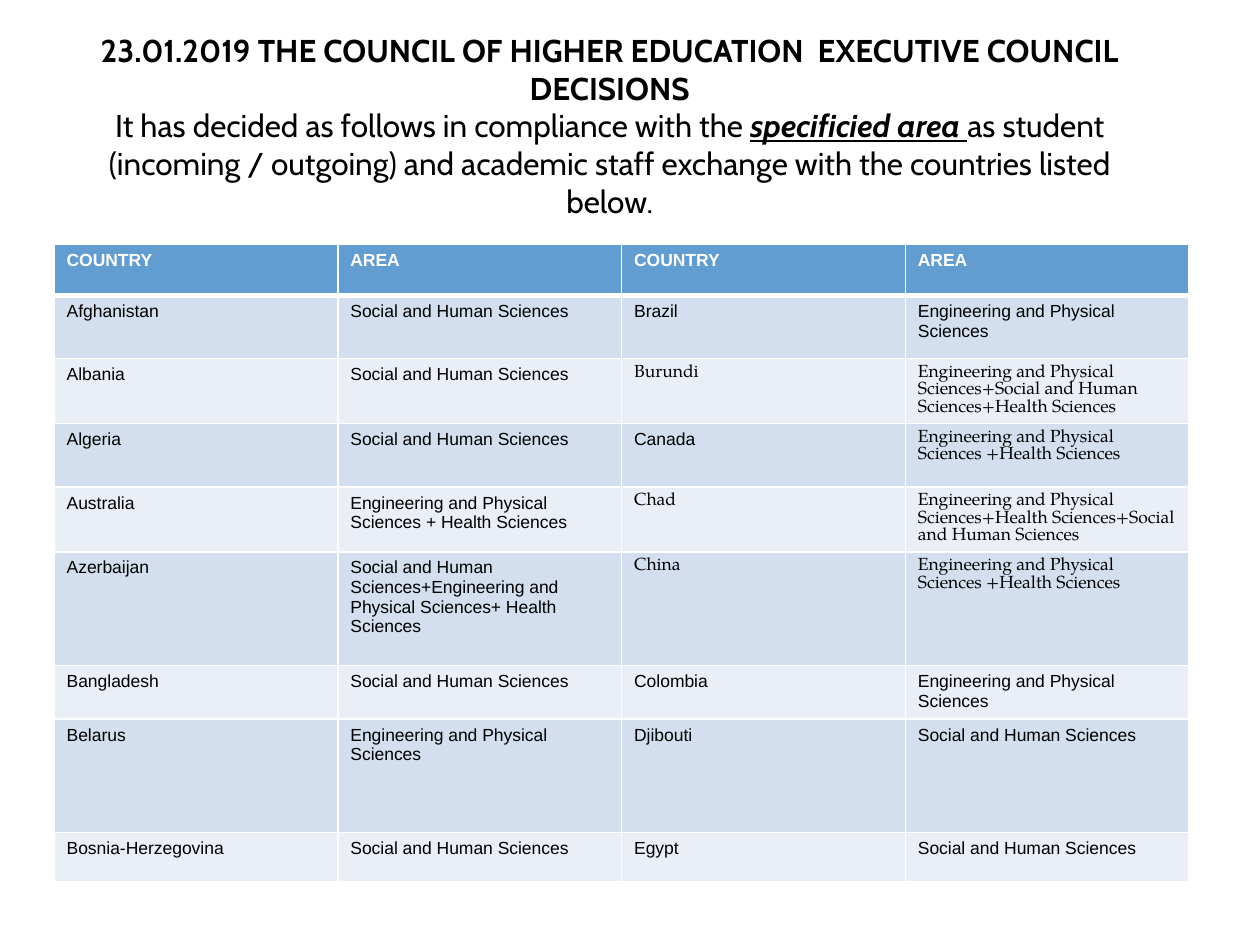
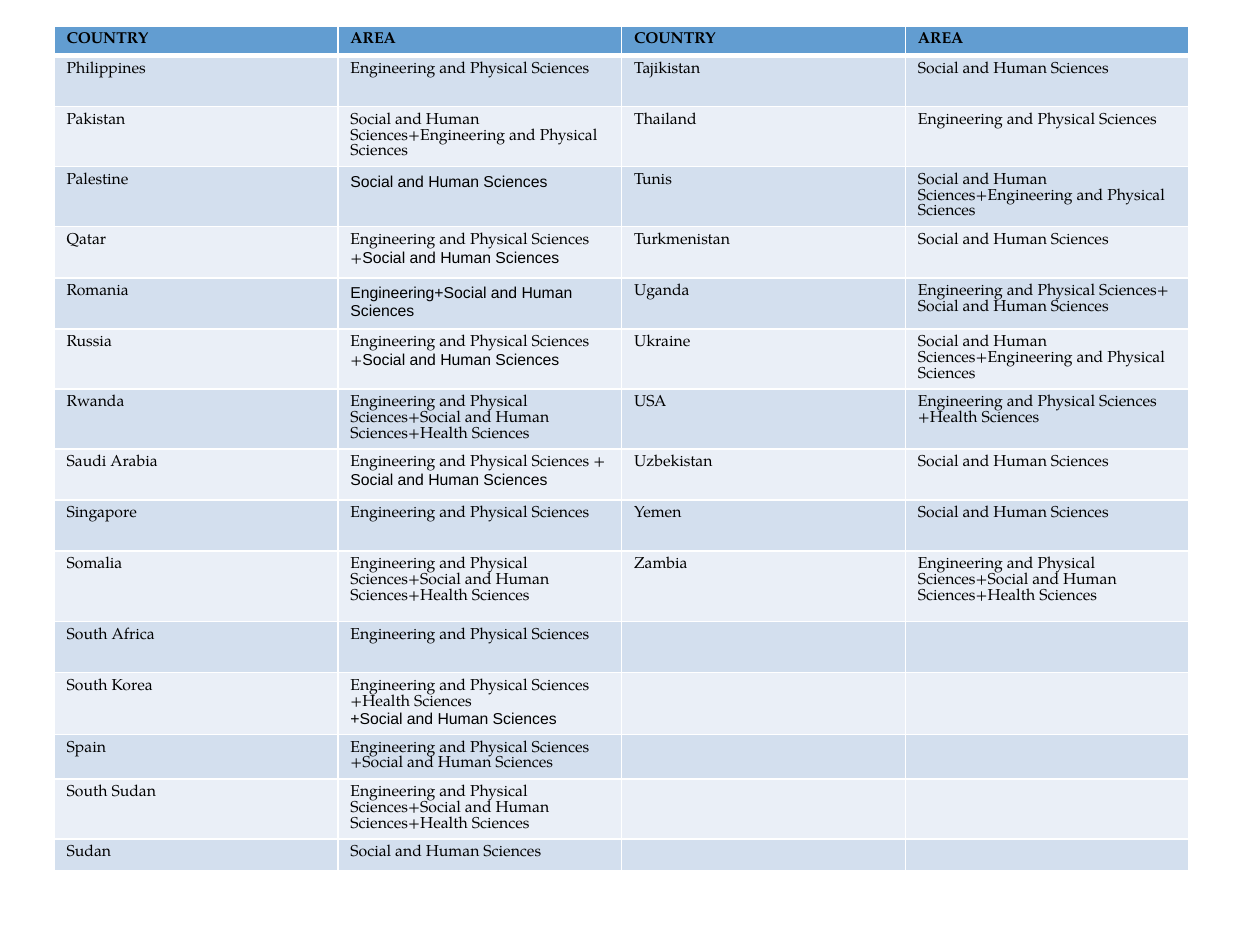
import pptx
import pptx.dml.color
import pptx.enum.text
import pptx.oxml.ns
import pptx.util
from dataclasses import dataclass
from lxml import etree
from pptx.util import Cm

# Content: "~" switches between a table's main font and its second font
HEADINGS = ("COUNTRY", "AREA", "COUNTRY", "AREA")
SOCIAL = "Social and Human Sciences"
ENGINEERING = "Engineering and Physical Sciences"
HEALTH = "Health Sciences"
ALL_AREAS = f"{ENGINEERING}+{SOCIAL}+{HEALTH}"
SOCIAL_ENGINEERING = f"{SOCIAL}+{ENGINEERING}"
ENGINEERING_HEALTH = f"{ENGINEERING} +{HEALTH}"

# Title pieces: text, bold, emphasised (italic and underlined)
TITLE = [
    ("23.01.2019 THE COUNCIL OF HIGHER EDUCATION  EXECUTIVE COUNCIL DECISIONS", True, False),
    ("\v", False, False),
    ("It has decided as follows in compliance with the ", False, False),
    ("specificied area ", True, True),
    ("as student (incoming / outgoing) and academic staff exchange "
     "with the countries listed below.", False, False),
]

# Each row: height in cm, then its four cells
FIRST_COUNTRIES = [
    (1.03, *HEADINGS),
    (1.27, "Afghanistan", SOCIAL, "Brazil", ENGINEERING),
    (1.3, "Albania", SOCIAL, "~Burundi", "~" + ALL_AREAS),
    (1.28, "Algeria", SOCIAL, "Canada", "~" + ENGINEERING_HEALTH),
    (1.3, "Australia", f"{ENGINEERING} + {HEALTH}",
     "~Chad", f"~{ENGINEERING}+{HEALTH}+{SOCIAL}"),
    (2.29, "Azerbaijan", f"{SOCIAL_ENGINEERING}+ {HEALTH}",
     "~China", "~" + ENGINEERING_HEALTH),
    (1.08, "Bangladesh", SOCIAL, "Colombia", ENGINEERING),
    (2.29, "Belarus", ENGINEERING, "Djibouti", SOCIAL),
    (0.98, "Bosnia-Herzegovina", SOCIAL, "Egypt", SOCIAL),
]
LAST_COUNTRIES = [
    (0.6, *HEADINGS),
    (1.03, "Philippines", ENGINEERING, "Tajikistan", SOCIAL),
    (1.21, "Pakistan", SOCIAL_ENGINEERING, "Thailand", ENGINEERING),
    (1.21, "Palestine", "~" + SOCIAL, "Tunis", SOCIAL_ENGINEERING),
    (1.03, "Qatar", f"{ENGINEERING} +~{SOCIAL}", "Turkmenistan", SOCIAL),
    (1.03, "Romania", f"~Engineering+{SOCIAL}", "Uganda", f"{ENGINEERING}+ {SOCIAL}"),
    (1.21, "Russia", f"{ENGINEERING} +~{SOCIAL}", "Ukraine", SOCIAL_ENGINEERING),
    (1.21, "Rwanda", ALL_AREAS, "USA", ENGINEERING_HEALTH),
    (1.03, "Saudi Arabia", f"{ENGINEERING} + ~{SOCIAL}", "Uzbekistan", SOCIAL),
    (1.03, "Singapore", ENGINEERING, "Yemen", SOCIAL),
    (1.42, "Somalia", ALL_AREAS, "Zambia", ALL_AREAS),
    (1.03, "South Africa", ENGINEERING, "", ""),
    (1.24, "South Korea", f"{ENGINEERING_HEALTH}\n~+{SOCIAL}", "", ""),
    (0.9, "Spain", f"{ENGINEERING} +{SOCIAL}", "", ""),
    (1.21, "South Sudan", ALL_AREAS, "", ""),
    (0.55, "Sudan", SOCIAL, "", ""),
]


@dataclass(frozen=True)
class Theme:
    black: str = "000000"
    white: str = "FFFFFF"
    header: str = "629DD1"
    bands: tuple = ("EAEFF7", "D3DFEE")
    title_font: str = "Cabin"
    sans: str = "Arial"
    serif: str = "TeX Gyre Pagella"
    title_size: int = 18
    first_size: int = 10
    last_size: int = 9
    thin: int = 1
    thick: int = 3


THEME = Theme()
TABLE_LEFT = Cm(1.09)
COLUMN_WIDTH = Cm(5.72)


def rgb(code):
    return pptx.dml.color.RGBColor.from_string(code)


def format_span(span, font, size, color, bold):
    span.font.name = font
    span.font.size = pptx.util.Pt(size)
    span.font.color.rgb = rgb(color)
    span.font.bold = bold


def add_title(page):
    box = page.shapes.title
    box.left, box.top, box.width, box.height = Cm(1.09), Cm(0.53), Cm(22.4), Cm(3.99)
    frame = box.text_frame
    frame.word_wrap = True
    frame.auto_size = pptx.enum.text.MSO_AUTO_SIZE.NONE
    frame.vertical_anchor = pptx.enum.text.MSO_ANCHOR.MIDDLE
    para = frame.paragraphs[0]
    para.alignment = pptx.enum.text.PP_ALIGN.CENTER
    for text, bold, emphasised in TITLE:
        if text == "\v":
            para.add_line_break()
            continue
        span = para.add_run()
        span.text = text
        format_span(span, THEME.title_font, THEME.title_size, THEME.black, bold)
        span.font.italic = span.font.underline = emphasised


def set_borders(cell, row):
    properties = cell._tc.get_or_add_tcPr()
    widths = {"lnL": THEME.thin, "lnR": THEME.thin,
              "lnT": THEME.thick if row == 1 else THEME.thin,
              "lnB": THEME.thick if row == 0 else THEME.thin}
    for side, width in widths.items():
        line = etree.SubElement(properties, pptx.oxml.ns.qn(f"a:{side}"),
                                w=str(pptx.util.Pt(width)))
        fill = etree.SubElement(line, pptx.oxml.ns.qn("a:solidFill"))
        etree.SubElement(fill, pptx.oxml.ns.qn("a:srgbClr"), val=THEME.white)


def fill_cell(cell, text, fonts, size, color, bold):
    cell.text_frame.text = text.replace("~", "")
    for para, line in zip(cell.text_frame.paragraphs, text.split("\n")):
        para.text = ""
        for index, piece in enumerate(line.split("~")):
            if piece:
                span = para.add_run()
                span.text = piece
                format_span(span, fonts[index % 2], size, color, bold)
        if not line:  # keeps empty cells from stretching their row
            etree.SubElement(para._p, pptx.oxml.ns.qn("a:endParaRPr"), sz=str(size * 100))


def add_country_table(page, top, rows, fonts, size, heading_color):
    height = sum(Cm(row[0]) for row in rows)
    table = page.shapes.add_table(len(rows), len(HEADINGS), TABLE_LEFT, top,
                                  COLUMN_WIDTH * len(HEADINGS), height).table
    table.horz_banding = False
    for column in table.columns:
        column.width = COLUMN_WIDTH
    for number, (row_height, *texts) in enumerate(rows):
        table.rows[number].height = Cm(row_height)
        heading = number == 0
        for column, text in enumerate(texts):
            cell = table.cell(number, column)
            set_borders(cell, number)
            cell.fill.solid()
            cell.fill.fore_color.rgb = rgb(THEME.header if heading else THEME.bands[number % 2])
            fill_cell(cell, text, fonts, size,
                      heading_color if heading else THEME.black, heading)


def main():
    deck = pptx.Presentation()
    deck.slide_width, deck.slide_height = Cm(25.4), Cm(19.05)

    # Decisions and the first countries
    page = deck.slides.add_slide(deck.slide_layouts[5])
    add_title(page)
    add_country_table(page, Cm(4.93), FIRST_COUNTRIES, (THEME.sans, THEME.serif),
                      THEME.first_size, THEME.white)

    # Last countries
    page = deck.slides.add_slide(deck.slide_layouts[6])
    add_country_table(page, Cm(0.52), LAST_COUNTRIES, (THEME.serif, THEME.sans),
                      THEME.last_size, THEME.black)

    deck.save("out.pptx")


if __name__ == "__main__":
    main()
